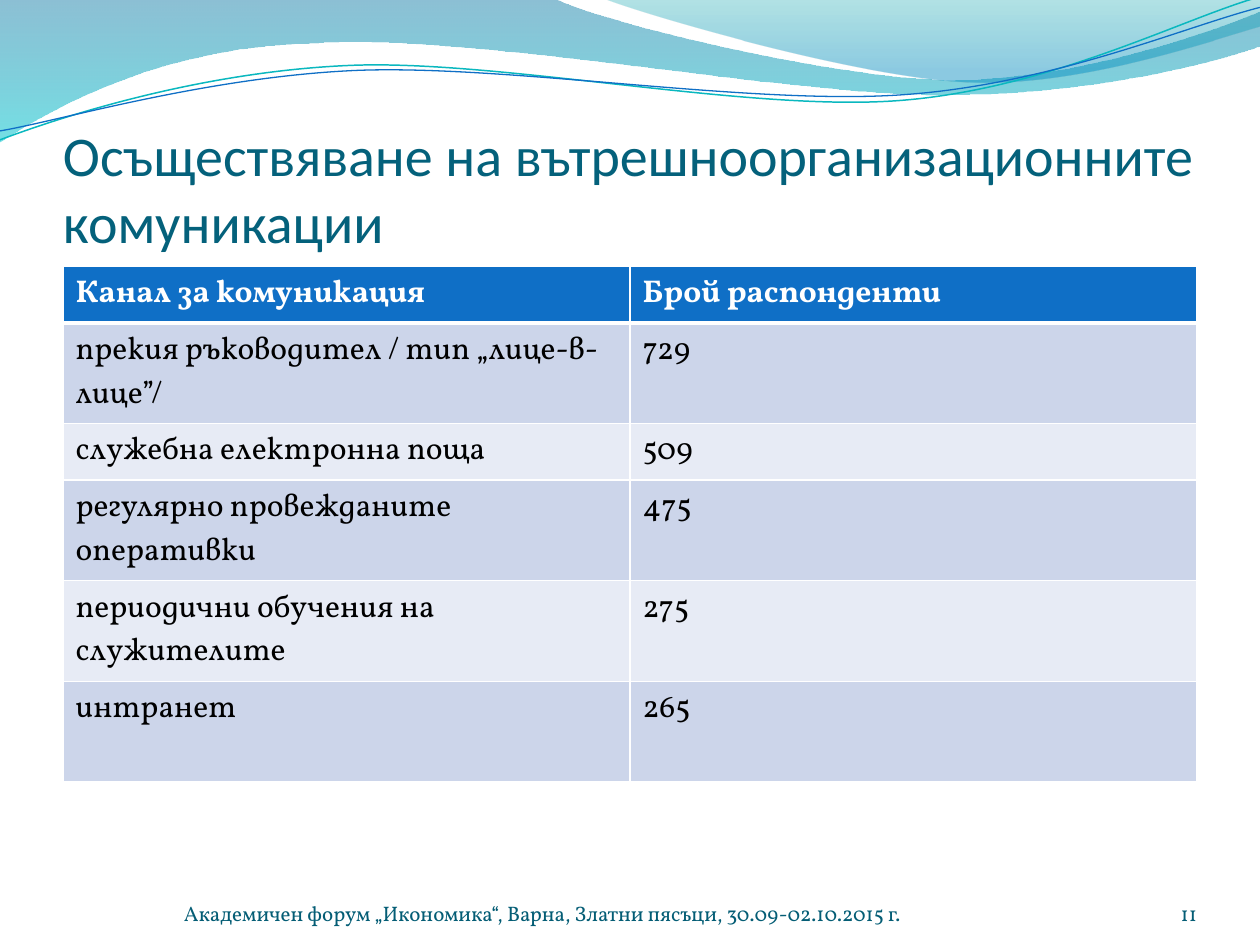
import pptx
import pptx.dml.color
import pptx.enum.lang
import pptx.enum.text
import pptx.oxml.ns
import pptx.util
from lxml import etree
from pptx.util import Cm, Pt

HEADING_FONT = "Calibri"
BODY_FONT = "Vollkorn"
FOOTER_COLOUR = "045D75"

# Each outline is a start point and segments: one point is a line, three a curve.
LONG_WAVE = ((0, 0), [
    [(11.18, -0.03)],
    [(12.09, 0.43), (16.87, 1.6), (19.25, 1.6)],
    [(21.67, 1.6), (24.33, 0.66), (25.4, 0.23)],
    [(25.43, 0.91)],
    [(24.97, 1.12), (22.1, 1.93), (18.95, 1.91)],
    [(15.8, 1.91), (9.7, 0.71), (6.53, 0.86)],
    [(3.28, 0.91), (1.17, 2.11), (-0.03, 2.87)],
    [(0, 0)],
])
RIGHT_WAVE = ((12.17, -0.03), [
    [(12.93, 0.28), (17.32, 1.57), (19.53, 1.65)],
    [(21.74, 1.75), (24.41, 0.81), (25.4, 0.53)],
    [(25.4, 0)],
    [(12.17, -0.03)],
])
TEAL_STRAND = ((0, 2.82), [
    [(1.22, 2.36), (4.01, 1.45), (7.04, 1.32)],
    [(10.03, 1.19), (15.06, 2.26), (18.11, 2.03)],
    [(21.16, 1.8), (23.83, 0.38), (25.35, -0.05)],
])
BLUE_STRAND = ((0, 2.64), [
    [(1.19, 2.44), (4.17, 1.55), (7.19, 1.42)],
    [(10.24, 1.3), (15.16, 2.13), (18.21, 1.91)],
    [(21.23, 1.7), (23.9, 0.53), (25.4, 0.15)],
])

CHANNELS = [
    ("Канал за комуникация", "Брой распонденти"),
    ("прекия ръководител / тип „лице-в-лице”/", "729"),
    ("служебна електронна поща", "509"),
    ("регулярно провежданите оперативки", "475"),
    ("периодични обучения на служителите", "275"),
    ("интранет", "265"),
]
SINGLE_ROW, DOUBLE_ROW = 1.14, 2.03
ROW_HEIGHTS = [SINGLE_ROW, DOUBLE_ROW, SINGLE_ROW] + [DOUBLE_ROW] * 3


def colour(hex_string):
    return pptx.dml.color.RGBColor.from_string(hex_string)


def add_outline(slide, left, top, outline, closed):
    """Add a freeform, turning each three-point segment into one Bézier curve."""
    start, segments = outline
    points = [(Cm(left + x), Cm(top + y))
              for x, y in [start, *(point for segment in segments for point in segment)]]
    builder = slide.shapes.build_freeform(*points[0])
    builder.add_line_segments(points[1:], close=closed)
    shape = builder.convert_to_shape()
    shape.shadow.inherit = False
    lines = iter(list(shape.element.iter(pptx.oxml.ns.qn("a:lnTo"))))
    for segment in segments:
        first, *others = [next(lines) for _ in segment]
        if others:
            curve = etree.Element(pptx.oxml.ns.qn("a:cubicBezTo"))
            first.addprevious(curve)
            for line in (first, *others):
                curve.append(line[0])
                line.getparent().remove(line)
    return shape


def add_wave(slide, left, top, outline, stops):
    """Add a wave with a downward gradient; a stop is position, colour, opacity in %."""
    shape = add_outline(slide, left, top, outline, True)
    shape.line.fill.background()
    shape.fill.gradient()
    shape.fill.gradient_angle = 270
    for stop, (position, hex_string, _) in zip(shape.fill.gradient_stops, stops):
        stop.position = position
        stop.color.rgb = colour(hex_string)
    colour_elements = shape.element.spPr.iter(pptx.oxml.ns.qn("a:srgbClr"))
    for element, (_, _, opacity) in zip(colour_elements, stops):
        alpha = etree.SubElement(element, pptx.oxml.ns.qn("a:alpha"))
        alpha.set("val", str(opacity * 1000))


def add_strand(slide, left, top, outline, hex_string, width):
    shape = add_outline(slide, left, top, outline, False)
    shape.fill.background()
    shape.line.color.rgb = colour(hex_string)
    shape.line.width = Pt(width)


def add_wave_band(slide, left, top):
    add_wave(slide, left, top, LONG_WAVE, [(0, "0074A1", 45), (1, "00C6CF", 55)])
    add_wave(slide, left, top, RIGHT_WAVE, [(0, "00A1A9", 30), (0.8, "008BBF", 45)])
    add_strand(slide, left, top, TEAL_STRAND, "0AB8BF", 0.85)
    add_strand(slide, left, top, BLUE_STRAND, "0F6FC6", 0.75)


def add_run(paragraph, text, font, size, hex_string, bold=False):
    run = paragraph.add_run()
    run.text = text
    run.font.name = font
    run.font.size = Pt(size)
    run.font.bold = bold
    run.font.color.rgb = colour(hex_string)
    return run


def add_text(slide, left, top, width, height, text, font, size, hex_string,
             alignment=pptx.enum.text.PP_ALIGN.LEFT, inset_top=0):
    box = slide.shapes.add_textbox(Cm(left), Cm(top), Cm(width), Cm(height))
    frame = box.text_frame
    frame.word_wrap = True
    frame.vertical_anchor = pptx.enum.text.MSO_ANCHOR.BOTTOM
    frame.margin_left = frame.margin_right = frame.margin_bottom = 0
    frame.margin_top = Cm(inset_top)
    paragraph = frame.paragraphs[0]
    paragraph.alignment = alignment
    add_run(paragraph, text, font, size, hex_string)


def set_borders(cell, widths):
    """Give a cell white borders; widths maps the sides L, R, T, B to points."""
    properties = cell._tc.get_or_add_tcPr()
    for side, width in widths.items():
        line = etree.SubElement(properties, pptx.oxml.ns.qn(f"a:ln{side}"))
        line.set("w", str(Pt(width)))
        fill = etree.SubElement(line, pptx.oxml.ns.qn("a:solidFill"))
        etree.SubElement(fill, pptx.oxml.ns.qn("a:srgbClr")).set("val", "FFFFFF")


def add_channel_table(slide, left, top, width):
    frame = slide.shapes.add_table(len(CHANNELS), 2, Cm(left), Cm(top),
                                   Cm(width), Cm(sum(ROW_HEIGHTS)))
    table = frame.table
    for row_index, texts in enumerate(CHANNELS):
        table.rows[row_index].height = Cm(ROW_HEIGHTS[row_index])
        is_header = row_index == 0
        band = "CCD5EA" if row_index % 2 else "E7EBF5"
        for column_index, text in enumerate(texts):
            cell = table.cell(row_index, column_index)
            set_borders(cell, {"L": 1, "R": 1,
                               "T": 3 if row_index == 1 else 1,
                               "B": 3 if is_header else 1})
            cell.fill.solid()
            cell.fill.fore_color.rgb = colour("0F6FC6" if is_header else band)
            run = add_run(cell.text_frame.paragraphs[0], text, BODY_FONT, 18,
                          "FFFFFF" if is_header else "000000", is_header)
            # The font has Bulgarian letterforms, chosen by the language.
            run.font.language_id = pptx.enum.lang.MSO_LANGUAGE_ID.BULGARIAN


def add_footer(slide, left, top, width, height):
    number_width = 2.11
    add_text(slide, left + width - number_width, top, number_width, height, "11",
             BODY_FONT, 12, FOOTER_COLOUR, pptx.enum.text.PP_ALIGN.RIGHT)
    add_text(slide, left + 2.44, top, 16.61, height,
             "Академичен форум „Икономика“, Варна, Златни пясъци, 30.09-02.10.2015 г.",
             BODY_FONT, 12, FOOTER_COLOUR)


def main():
    presentation = pptx.Presentation()
    presentation.slide_width = Cm(25.4)
    presentation.slide_height = Cm(19.05)
    slide = presentation.slides.add_slide(presentation.slide_layouts[6])
    margin, content_width = 1.27, 22.86
    add_wave_band(slide, 0, 0)
    add_text(slide, margin, 1.96, content_width, 3.18,
             "Осъществяване на вътрешноорганизационните комуникации",
             HEADING_FONT, 32, "04617B", inset_top=0.13)
    add_channel_table(slide, margin, 5.37, content_width)
    add_footer(slide, margin, 17.65, content_width, 1.02)
    presentation.save("out.pptx")


if __name__ == "__main__":
    main()
